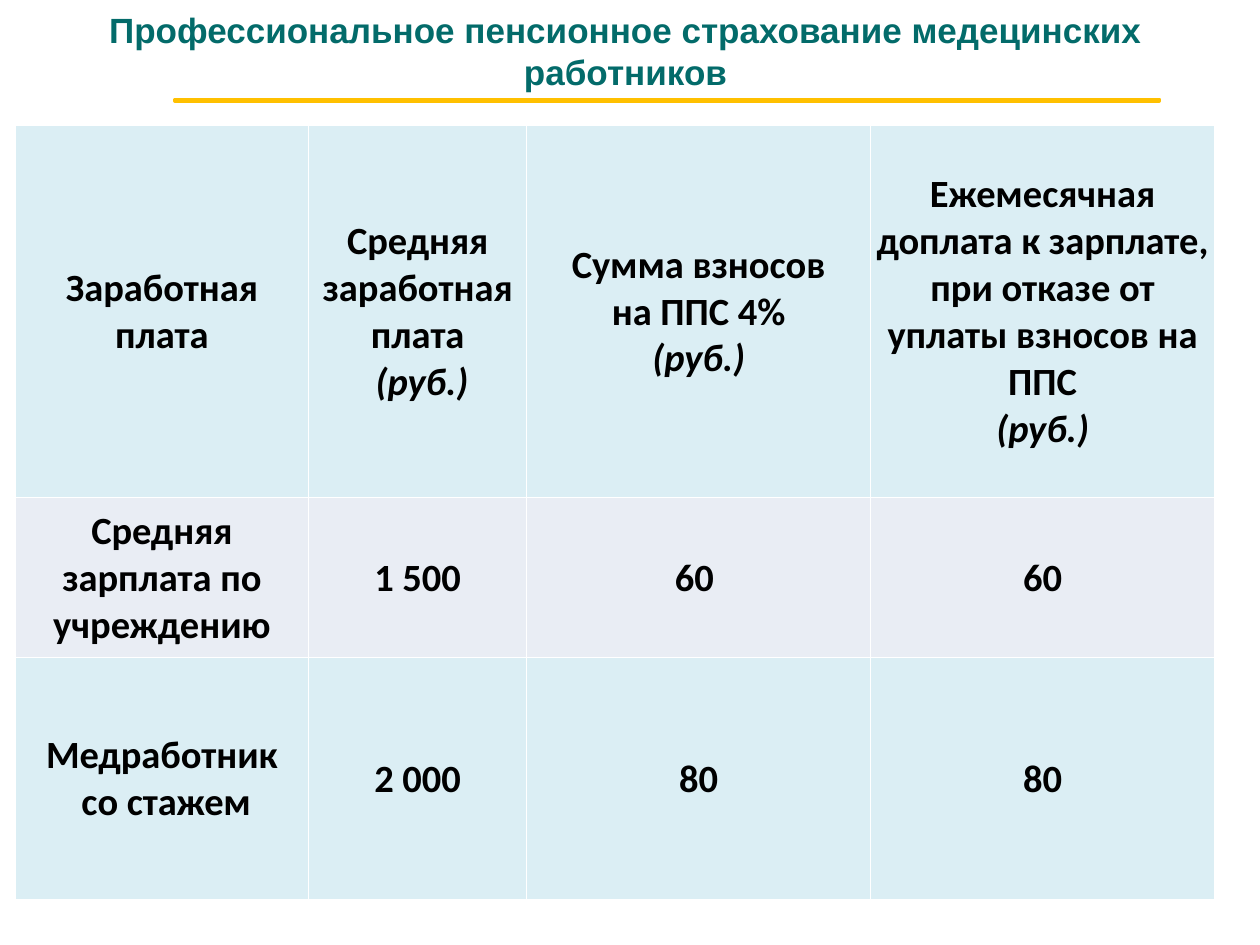
from lxml.etree import SubElement
from pptx import Presentation
from pptx.dml.color import RGBColor
from pptx.enum.shapes import MSO_SHAPE as Preset
from pptx.enum.text import MSO_ANCHOR as Anchor, MSO_AUTO_SIZE as AutoSize, PP_ALIGN as Align
from pptx.oxml.ns import qn
from pptx.util import Inches, Pt

TITLE = "Профессиональное пенсионное страхование медецинских работников"
UNIT = "(руб.)"
# "\n" starts a paragraph, "\v" breaks a line
ROWS = [
    ["Заработная плата",
     f"Средняя заработная плата\n {UNIT}",
     f"Сумма взносов\v на ППС 4% \n{UNIT}",
     f"Ежемесячная доплата к зарплате, при отказе от уплаты взносов на ППС\n{UNIT}"],
    ["Средняя зарплата по учреждению", "1 500", "60 ", "60"],
    ["Медработник\n со стажем", "2 000", "80", "80"],
]
COLUMN_WIDTHS = [2.33, 1.73, 2.73, 2.73]
ROW_HEIGHTS = [2.96, 1.27, 1.92]

TEAL = RGBColor(0x03, 0x6B, 0x6A)
GOLD = RGBColor(0xFF, 0xC0, 0x00)
BLUE = RGBColor(0x4F, 0x81, 0xBD)
BLACK = RGBColor(0x00, 0x00, 0x00)
WHITE = RGBColor(0xFF, 0xFF, 0xFF)
BAND_FILLS = [RGBColor(0xDB, 0xEE, 0xF4), RGBColor(0xE9, 0xED, 0xF4)]


def style_paragraph(paragraph, name, size, color):
    paragraph.alignment = Align.CENTER
    font = paragraph.font
    font.name, font.size, font.bold = name, Pt(size), True
    font.color.rgb = color


def add_title(slide):
    box = slide.shapes.add_textbox(Inches(0.28), Inches(0.02), Inches(9.37), Inches(0.77))
    frame = box.text_frame
    frame.word_wrap = True
    frame.auto_size = AutoSize.SHAPE_TO_FIT_TEXT
    frame.text = TITLE
    style_paragraph(frame.paragraphs[0], "Arial", 20, TEAL)


def add_underline(slide):
    rule = slide.shapes.add_shape(
        Preset.MATH_MINUS, Inches(-0.02), Inches(0.77), Inches(10.63), Inches(0.05))
    rule.shadow.inherit = False
    rule.fill.solid()
    rule.fill.fore_color.rgb = BLUE
    rule.line.color.rgb = GOLD
    rule.line.width = Pt(2)


def add_borders(cell):
    properties = cell._tc.get_or_add_tcPr()
    for side in ("a:lnL", "a:lnR", "a:lnT", "a:lnB"):
        line = SubElement(properties, qn(side), w=str(Pt(1)))
        fill = SubElement(line, qn("a:solidFill"))
        SubElement(fill, qn("a:srgbClr"), val=str(WHITE))


def fill_cell(cell, text, color):
    add_borders(cell)
    cell.fill.solid()
    cell.fill.fore_color.rgb = color
    cell.vertical_anchor = Anchor.MIDDLE
    cell.margin_left = cell.margin_right = cell.margin_top = Inches(0.01)
    cell.margin_bottom = 0
    cell.text_frame.text = text
    for paragraph in cell.text_frame.paragraphs:
        style_paragraph(paragraph, "Calibri", 22, BLACK)
        paragraph.font.italic = paragraph.text.strip() == UNIT


def add_salary_table(slide):
    table = slide.shapes.add_table(
        len(ROWS), len(COLUMN_WIDTHS), Inches(0.12), Inches(0.99),
        Inches(sum(COLUMN_WIDTHS)), Inches(sum(ROW_HEIGHTS))).table
    for column, width in zip(table.columns, COLUMN_WIDTHS):
        column.width = Inches(width)
    for index, (row, height, texts) in enumerate(zip(table.rows, ROW_HEIGHTS, ROWS)):
        row.height = Inches(height)
        for cell, text in zip(row.cells, texts):
            fill_cell(cell, text, BAND_FILLS[index % 2])


def main():
    presentation = Presentation()
    presentation.slide_width, presentation.slide_height = Inches(10), Inches(7.5)
    slide = presentation.slides.add_slide(presentation.slide_layouts[6])
    add_title(slide)
    add_underline(slide)
    add_salary_table(slide)
    presentation.save("out.pptx")


if __name__ == "__main__":
    main()
